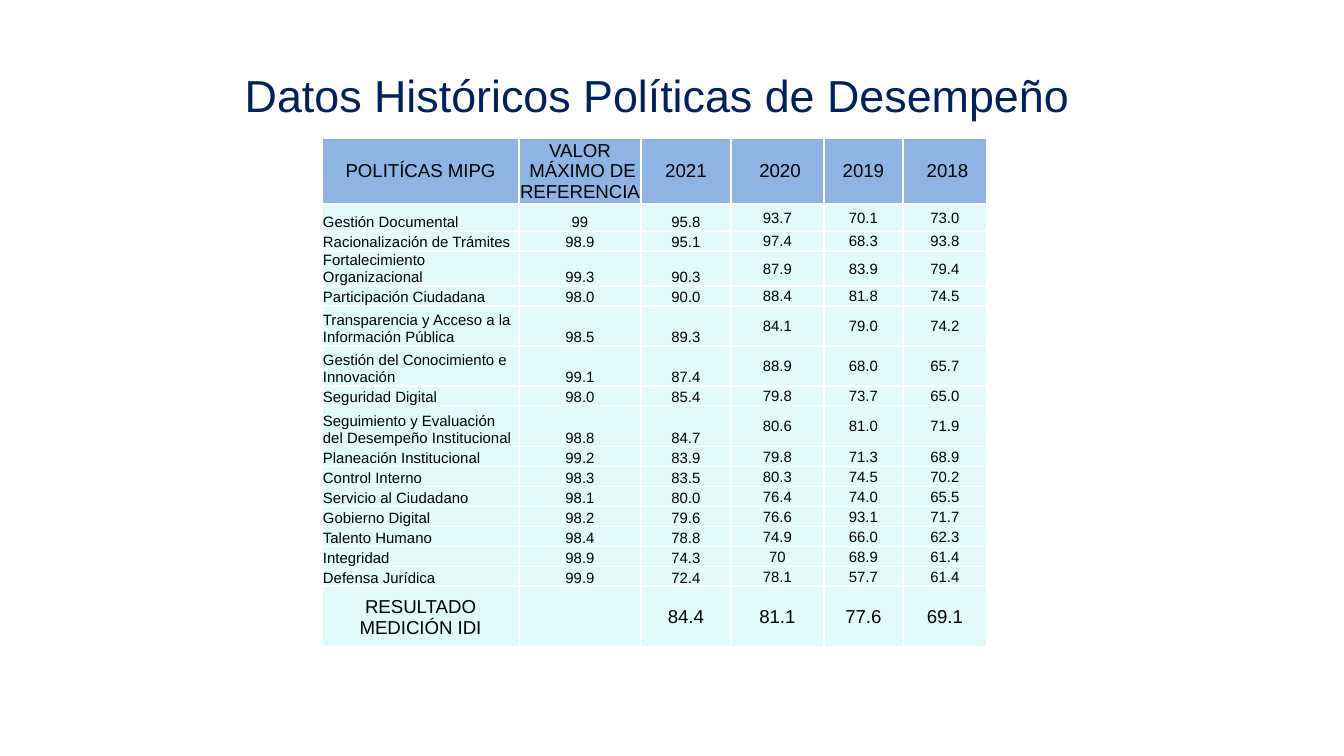
"""Build the slide with the historical performance policy scores."""
from lxml import etree
from pptx import Presentation
from pptx import util as u
from pptx.dml.color import RGBColor
from pptx.enum import text
from pptx.oxml import ns

PX = 914400 / 134.4
NAVY = RGBColor(0x00, 0x20, 0x60)
BLACK = RGBColor(0x00, 0x00, 0x00)
BLUE = RGBColor(0x8E, 0xB4, 0xE3)
PALE = RGBColor(0xE2, 0xFA, 0xFC)
WHITE = RGBColor(0xFF, 0xFF, 0xFF)
FONT = "Arial"

TITLE = "Datos Históricos Políticas de Desempeño "
HEADER = ("POLITÍCAS MIPG", "VALOR\v MÁXIMO DE REFERENCIA", "2021", " 2020", "2019", " 2018")
POLICIES = [
    ("Gestión Documental", "99", "95.8", "93.7", "70.1", "73.0"),
    ("Racionalización de Trámites", "98.9", "95.1", "97.4", "68.3", "93.8"),
    ("Fortalecimiento Organizacional", "99.3", "90.3", "87.9", "83.9", "79.4"),
    ("Participación Ciudadana", "98.0", "90.0", "88.4", "81.8", "74.5"),
    ("Transparencia y Acceso a la Información Pública", "98.5", "89.3", "84.1", "79.0", "74.2"),
    ("Gestión del Conocimiento e Innovación", "99.1", "87.4", "88.9", "68.0", "65.7"),
    ("Seguridad Digital", "98.0", "85.4", "79.8", "73.7", "65.0"),
    ("Seguimiento y Evaluación del Desempeño Institucional", "98.8", "84.7", "80.6", "81.0", "71.9"),
    ("Planeación Institucional", "99.2", "83.9", "79.8", "71.3", "68.9"),
    ("Control Interno", "98.3", "83.5", "80.3", "74.5", "70.2"),
    ("Servicio al Ciudadano", "98.1", "80.0", "76.4", "74.0", "65.5"),
    ("Gobierno Digital", "98.2", "79.6", "76.6", "93.1", "71.7"),
    ("Talento Humano", "98.4", "78.8", "74.9", "66.0", "62.3"),
    ("Integridad", "98.9", "74.3", "70", "68.9", "61.4"),
    ("Defensa Jurídica", "99.9", "72.4", "78.1", "57.7", "61.4"),
]
RESULT = ("RESULTADO MEDICIÓN IDI", "", "84.4", "81.1", "77.6", "69.1")
ROWS = [HEADER, *POLICIES, RESULT]
COLUMN_WIDTHS = (197, 122, 90, 93, 79, 84)
POLICY_HEIGHT = 20
TALL_ROWS = {0: 66, 1: 27, 3: 35, 5: 40, 6: 40, 8: 41, len(ROWS) - 1: 61}
ROW_HEIGHTS = [TALL_ROWS.get(row, POLICY_HEIGHT) for row in range(len(ROWS))]


def px(length):
    return u.Emu(round(length * PX))


def style_font(font, size, color):
    font.name, font.size, font.bold = FONT, u.Pt(size), False
    font.color.rgb = color


def add_borders(cell):
    properties = cell._tc.get_or_add_tcPr()
    for side in "LRTB":
        border = etree.SubElement(properties, ns.qn(f"a:ln{side}"), w=str(u.Pt(1)))
        fill = etree.SubElement(border, ns.qn("a:solidFill"))
        etree.SubElement(fill, ns.qn("a:srgbClr"), val=str(WHITE))


def fill_cell(cell, content, row, column):
    is_policy = 0 < row < len(ROWS) - 1
    add_borders(cell)
    cell.fill.solid()
    cell.fill.fore_color.rgb = PALE if row else BLUE
    cell.margin_left = cell.margin_right = cell.margin_top = px(1)
    cell.margin_bottom = 0
    at_bottom = is_policy and column < 3
    cell.vertical_anchor = text.MSO_ANCHOR.BOTTOM if at_bottom else text.MSO_ANCHOR.MIDDLE
    cell.text = content
    paragraph = cell.text_frame.paragraphs[0]
    is_name = is_policy and column == 0
    paragraph.alignment = text.PP_ALIGN.LEFT if is_name else text.PP_ALIGN.CENTER
    style_font(paragraph.font, 8 if is_policy else 10, BLACK)


def add_title(slide):
    title = slide.shapes.title
    title.left, title.top, title.width, title.height = map(px, (58, 70, 1210, 50))
    title.text_frame.text = TITLE
    title.text_frame.vertical_anchor = text.MSO_ANCHOR.MIDDLE
    title.text_frame.auto_size = text.MSO_AUTO_SIZE.NONE
    paragraph = title.text_frame.paragraphs[0]
    paragraph.alignment = text.PP_ALIGN.CENTER
    style_font(paragraph.font, 24, NAVY)


def add_scores(slide):
    scores = slide.shapes.add_table(
        len(ROWS), len(HEADER), px(322), px(138),
        px(sum(COLUMN_WIDTHS)), px(sum(ROW_HEIGHTS))).table
    scores.first_row = scores.horz_banding = False
    for column, width in zip(scores.columns, COLUMN_WIDTHS):
        column.width = px(width)
    for row, (contents, height) in enumerate(zip(ROWS, ROW_HEIGHTS)):
        scores.rows[row].height = px(height)
        for column, content in enumerate(contents):
            fill_cell(scores.cell(row, column), content, row, column)


def main():
    deck = Presentation()
    deck.slide_width, deck.slide_height = px(1344), px(756)
    slide = deck.slides.add_slide(deck.slide_layouts[5])
    add_title(slide)
    add_scores(slide)
    deck.save("out.pptx")


if __name__ == "__main__":
    main()
